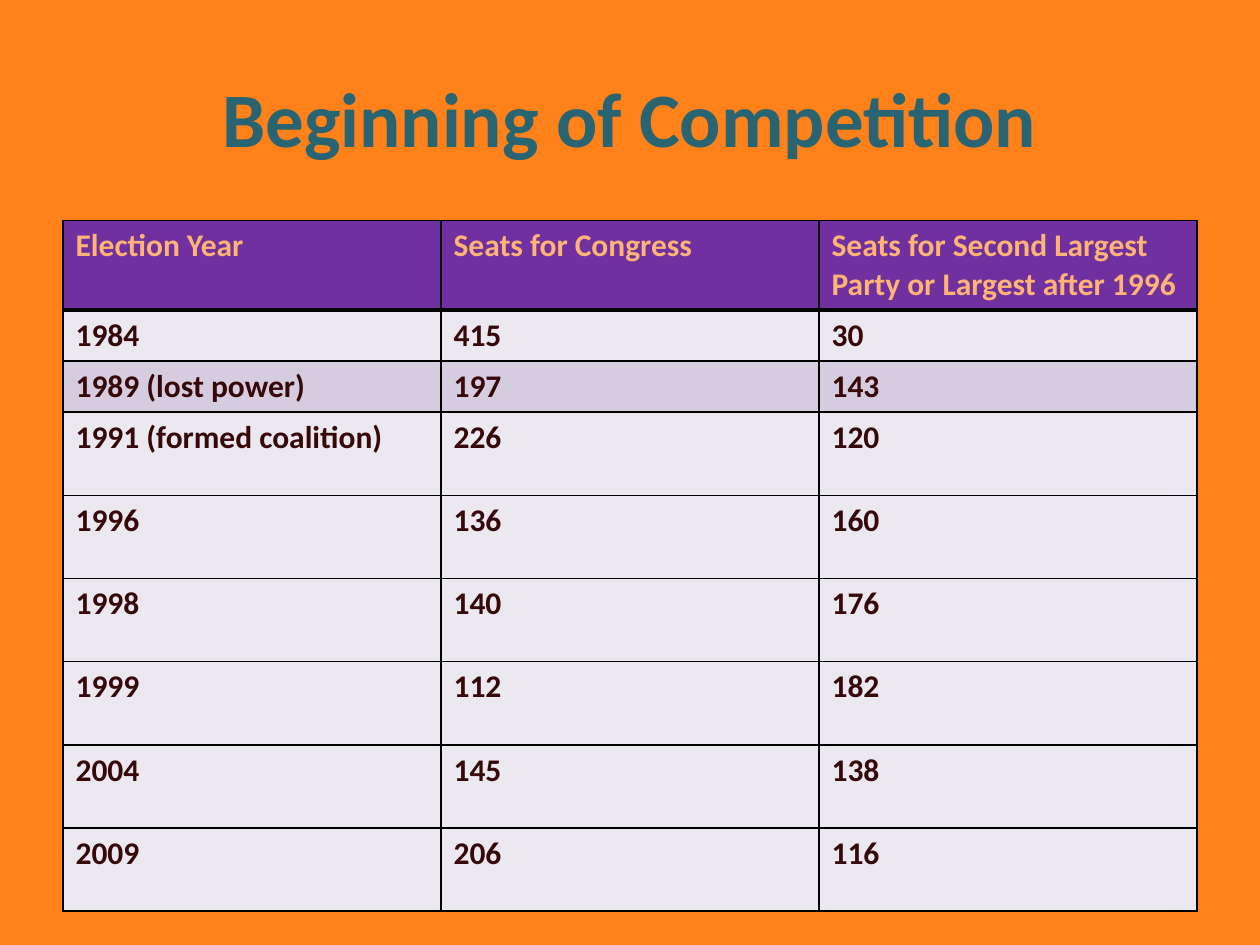
import pptx
import pptx.dml.color
import pptx.enum.text
import pptx.oxml
import pptx.oxml.ns
import pptx.util

WIDE, HIGH = 10, 7.5
EDGE = WIDE * 0.05
SPAN = WIDE - 2 * EDGE
FONT = "Calibri"
DARK, PALE, TINT = "36080A", "EBE8F0", "D5CDDF"
HEADS = ["Election Year", "Seats for Congress",
         "Seats for Second Largest Party or Largest after 1996"]
SEATS = [
    ("1984", 415, 30),
    ("1989 (lost power)", 197, 143),
    ("1991 (formed coalition)", 226, 120),
    ("1996", 136, 160),
    ("1998", 140, 176),
    ("1999", 112, 182),
    ("2004", 145, 138),
    ("2009", 206, 116),
]
ROWS = [0.71] + [0.4] * 2 + [0.66] * 6


def paint(item, color):
    item.fill.solid()
    item.fill.fore_color.rgb = pptx.dml.color.RGBColor.from_string(color)


def style(par, size, color):
    par.font.name = FONT
    par.font.size = pptx.util.Pt(size)
    par.font.bold = True
    par.font.color.rgb = pptx.dml.color.RGBColor.from_string(color)


def rule(cell, side, width):
    """Draw a black border on one side (L, R, T or B) of a cell."""
    line = pptx.oxml.parse_xml(
        f'<a:ln{side} {pptx.oxml.ns.nsdecls("a")} w="{pptx.util.Pt(width)}">'
        '<a:solidFill><a:srgbClr val="000000"/></a:solidFill>'
        f'</a:ln{side}>')
    cell._tc.get_or_add_tcPr().append(line)


def add_title(slide, text):
    title = slide.shapes.title
    title.left, title.top, title.width, title.height = map(
        pptx.util.Inches, (EDGE, 0.3, SPAN, 1.25))
    frame = title.text_frame
    frame.text = text
    frame.vertical_anchor = pptx.enum.text.MSO_ANCHOR.MIDDLE
    par = frame.paragraphs[0]
    par.alignment = pptx.enum.text.PP_ALIGN.CENTER
    style(par, 44, "296472")


def fill_cell(cell, text, row):
    cell.text = str(text)
    style(cell.text_frame.paragraphs[0], 18, DARK if row else "FFB375")
    for side in "LR":
        rule(cell, side, 1)
    rule(cell, "T", 3 if row == 1 else 1)
    rule(cell, "B", 3 if row == 0 else 1)
    paint(cell, {0: "7030A0", 2: TINT}.get(row, PALE))


def add_grid(slide):
    box = map(pptx.util.Inches, (EDGE, 1.75, SPAN, sum(ROWS)))
    table = slide.shapes.add_table(len(ROWS), len(HEADS), *box).table
    for row, high in enumerate(ROWS):
        table.rows[row].height = pptx.util.Inches(high)
    for row, texts in enumerate([HEADS] + SEATS):
        for col, text in enumerate(texts):
            fill_cell(table.cell(row, col), text, row)


def main():
    deck = pptx.Presentation()
    deck.slide_width = pptx.util.Inches(WIDE)
    deck.slide_height = pptx.util.Inches(HIGH)
    slide = deck.slides.add_slide(deck.slide_layouts[5])
    paint(slide.background, "FF8119")
    add_title(slide, "Beginning of Competition")
    add_grid(slide)
    deck.save("out.pptx")


if __name__ == "__main__":
    main()
